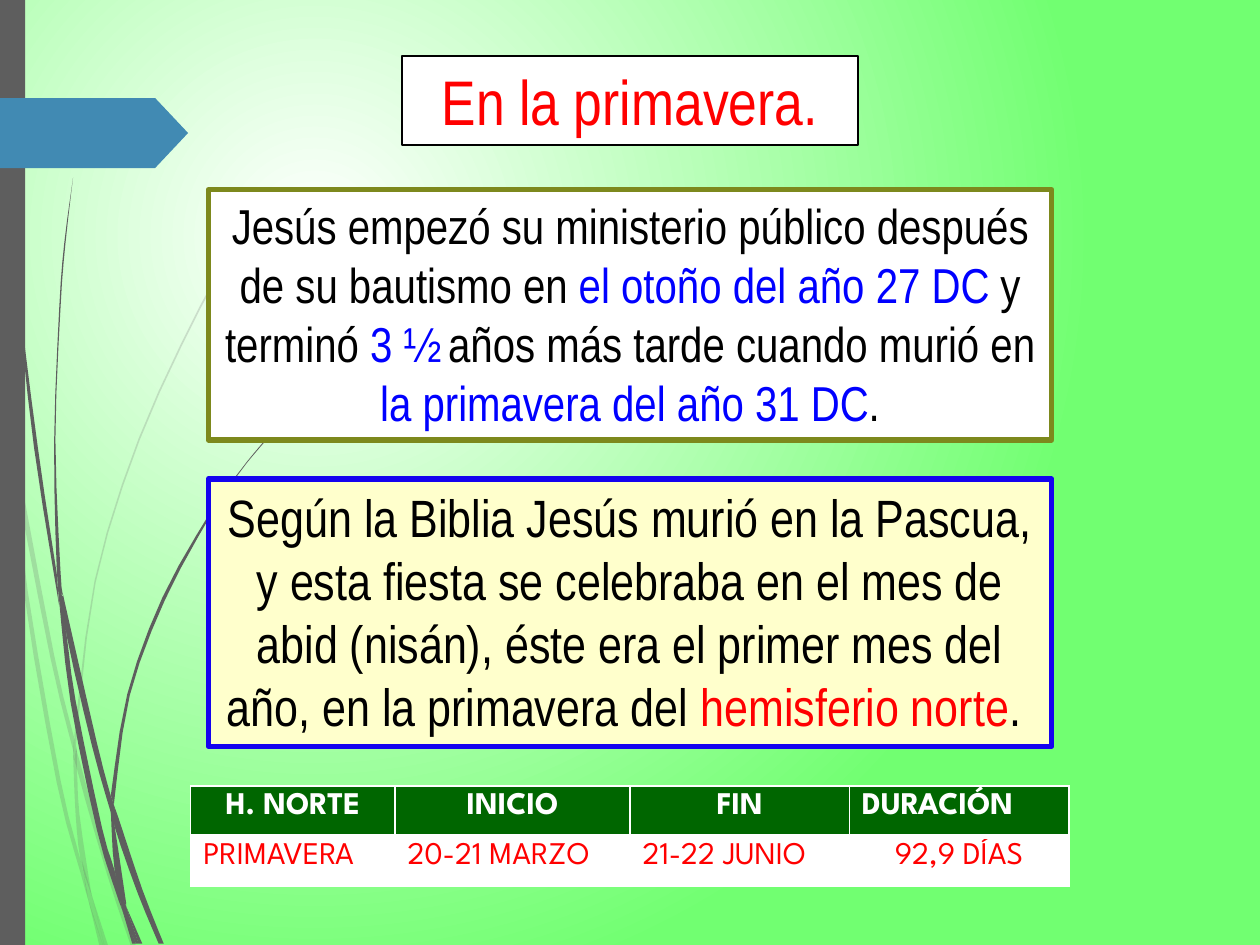
import pptx
import pptx.dml.color
import pptx.enum.shapes
import pptx.enum.text
import pptx.oxml
import pptx.oxml.ns
import pptx.util
from lxml import etree

Pt = pptx.util.Pt
qn = pptx.oxml.ns.qn
ALIGN = pptx.enum.text.PP_ALIGN
SHAPE = pptx.enum.shapes.MSO_SHAPE

COLOURS = {
    "white": "FFFFFF", "black": "000000", "red": "FF0000", "blue": "0000FF",
    "meadow": "71FF71", "grass": "5E5E5E", "arrow": "418AB3",
    "olive": "7D891D", "indigo": "1403EF", "cream": "FFFFCC", "header": "006600",
}

# Each blade of grass has an edge going down and an edge going back up,
# on a grid with this many points to the step.
GRID = 0.72
PALE_BLADES = [
    ([(0, 282), (6, 322), (8, 350)], [(7, 344), (0, 299)]),
    ([(10, 345), (12, 376), (40, 522), (59, 599)], [(59, 586), (43, 520), (10, 345)]),
    ([(61, 596), (61, 610), (85, 694), (104, 751)],
     [(108, 751), (88, 692), (64, 607), (61, 596)]),
    ([(73, 711), (83, 751)], [(86, 751), (73, 711)]),
    ([(8, 350), (19, 470), (45, 621), (64, 693), (70, 714)],
     [(69, 707), (64, 683), (48, 619), (22, 469), (12, 376), (8, 350)]),
    ([(58, 599), (60, 646), (64, 683), (73, 711)], [(72, 706), (63, 646), (61, 610), (58, 599)]),
    ([(217, 153), (201, 175), (186, 197), (158, 244), (110, 348), (75, 461), (59, 584)],
     [(61, 596), (61, 584), (76, 462), (111, 349), (159, 245), (187, 198), (201, 175),
      (217, 154)]),
    ([(70, 714), (79, 751)], [(82, 751), (70, 714)]),
    ([(58, 599), (61, 610)], [(61, 596), (59, 586), (58, 599)]),
    ([(65, 683), (70, 714), (82, 751)], [(83, 751), (73, 711), (65, 683)]),
]
DARK_BLADES = [
    ([(2, 0), (3, 48), (5, 110), (14, 233), (27, 355), (47, 481)],
     [(45, 455), (30, 355), (15, 232), (6, 109), (4, 48), (3, 0)]),
    ([(50, 472), (53, 505), (73, 592), (88, 645)], [(88, 632), (77, 590), (50, 472)]),
    ([(91, 641), (91, 656), (109, 708), (126, 749)],
     [(130, 749), (113, 706), (94, 649), (91, 641)]),
    ([(47, 477), (56, 557), (77, 659), (92, 708), (97, 722)],
     [(96, 717), (91, 691), (81, 657), (60, 556), (53, 505), (47, 477)]),
    ([(58, 141), (51, 193), (47, 245), (43, 349), (45, 449), (49, 472)],
     [(50, 472), (48, 453), (44, 349), (48, 245), (52, 193), (58, 141)]),
    ([(100, 719), (110, 749)], [(113, 749), (100, 719)]),
    ([(45, 449), (47, 477), (53, 505)], [(50, 472), (49, 472), (45, 449)]),
    ([(215, 344), (203, 358), (191, 373), (168, 405), (129, 474), (101, 551), (88, 631)],
     [(91, 641), (91, 633), (103, 552), (131, 476), (169, 406), (191, 374), (203, 359),
      (216, 344)]),
    ([(97, 722), (105, 749)], [(108, 749), (97, 722)]),
    ([(88, 645), (91, 691), (100, 719)], [(100, 716), (91, 656), (88, 645)]),
    ([(88, 631), (88, 645), (91, 656)], [(91, 641), (88, 631)]),
    ([(91, 691), (97, 722), (108, 749)], [(110, 749), (100, 719), (91, 691)]),
]


def rgb(colour):
    return pptx.dml.color.RGBColor.from_string(COLOURS[colour])


def paint(filled, colour):
    filled.fill.solid()
    filled.fill.fore_color.rgb = rgb(colour)


def line_xml(tag, width, colour):
    """Return a line element, for a text outline or a cell border."""
    line = etree.Element(qn(tag), w=str(Pt(width)))
    solid = etree.SubElement(line, qn("a:solidFill"))
    etree.SubElement(solid, qn("a:srgbClr"), val=COLOURS[colour])
    return line


def set_background(slide):
    """Glow from the upper left, white to green."""
    fill = slide.background.fill
    fill.gradient()
    for stop, position, colour in zip(fill.gradient_stops, (0, 0.99), ("white", "meadow")):
        stop.position = position
        stop.color.rgb = rgb(colour)
    linear = slide.background._cSld.find(".//" + qn("a:lin"))
    glow = etree.Element(qn("a:path"), path="circle")
    etree.SubElement(glow, qn("a:fillToRect"), l="50000", t="50000", r="100000", b="100000")
    linear.getparent().replace(linear, glow)


def smooth(points, steps=3):
    """Catmull-Rom curve through the points; a lone segment stays straight."""
    if len(points) < 3:
        return points
    padded = [points[0], *points, points[-1]]
    curve = []
    for a, b, c, d in zip(padded, padded[1:], padded[2:], padded[3:]):
        for step in range(steps):
            t = step / steps
            curve.append(tuple(
                q + t / 2 * (r - p + t * (2 * p - 5 * q + 4 * r - s + t * (3 * (q - r) + s - p)))
                for p, q, r, s in zip(a, b, c, d)))
    return curve + [points[-1]]


def add_blade(slide, edges, opacity):
    outline = [(Pt(x * GRID), Pt(y * GRID)) for edge in edges for x, y in smooth(edge)]
    builder = slide.shapes.build_freeform(*outline[0])
    builder.add_line_segments(outline[1:], close=True)
    blade = builder.convert_to_shape()
    finish_decoration(blade, "grass")
    if opacity < 100:
        shade = blade.fill._xPr.find(".//" + qn("a:srgbClr"))
        etree.SubElement(shade, qn("a:alpha"), val=str(opacity * 1000))


def finish_decoration(shape, colour):
    shape.shadow.inherit = False
    paint(shape, colour)
    shape.line.fill.background()


def add_decoration(slide, preset, box, colour):
    shape = slide.shapes.add_shape(preset, *map(Pt, box))
    finish_decoration(shape, colour)
    return shape


def add_run(paragraph, text, colour, outlined=True, **font_format):
    run = paragraph.add_run()
    run.text = text
    for attribute, value in font_format.items():
        setattr(run.font, attribute, value)
    run.font.color.rgb = rgb(colour)
    if outlined:
        run.font._element.insert(0, line_xml("a:ln", 1.5, colour))


def add_panel(slide, box, fill, border, border_width, size, runs):
    panel = slide.shapes.add_textbox(*map(Pt, box))
    paint(panel, fill)
    panel.line.color.rgb = rgb(border)
    panel.line.width = Pt(border_width)
    frame_format = {"word_wrap": True,
                    "auto_size": pptx.enum.text.MSO_AUTO_SIZE.SHAPE_TO_FIT_TEXT}
    for attribute, value in frame_format.items():
        setattr(panel.text_frame, attribute, value)
    paragraph = panel.text_frame.paragraphs[0]
    paragraph.alignment = ALIGN.CENTER
    for text, colour in runs:
        add_run(paragraph, text, colour, name="Arial Narrow", size=Pt(size))


def add_season_table(slide):
    widths = (116.8, 134.2, 125.4, 125.4)
    rows = (
        (("H. NORTE", "INICIO", "FIN", "DURACIÓN"), (0, 1, 2), "header", "white", 3),
        (("PRIMAVERA", "20-21 MARZO", "21-22 JUNIO", "92,9 DÍAS"), (3,), "white", "red", 1),
    )
    table = slide.shapes.add_table(len(rows), len(widths), Pt(109), Pt(449),
                                   Pt(sum(widths)), Pt(57.6)).table
    for column, width in zip(table.columns, widths):
        column.width = Pt(width)
    for r, (texts, centred, fill, colour, bottom) in enumerate(rows):
        header = r == 0
        for c, text in enumerate(texts):
            cell = table.cell(r, c)
            paint(cell, fill)
            paragraph = cell.text_frame.paragraphs[0]
            paragraph.alignment = ALIGN.CENTER if c in centred else ALIGN.LEFT
            add_run(paragraph, text, colour, outlined=not header,
                    name="League Spartan", size=Pt(18), bold=header)
            top = 1 if header else rows[0][-1]
            for place, (side, width) in enumerate(zip("LRTB", (1, 1, top, bottom))):
                cell._tc.get_or_add_tcPr().insert(place, line_xml("a:ln" + side, width, "white"))


def main():
    deck = pptx.Presentation()
    deck.slide_width, deck.slide_height = Pt(720), Pt(540)
    slide = deck.slides.add_slide(deck.slide_layouts[6])
    set_background(slide)
    for blades, opacity in ((PALE_BLADES, 20), (DARK_BLADES, 100)):
        for edges in blades:
            add_blade(slide, edges, opacity)
    add_decoration(slide, SHAPE.RECTANGLE, (0, 0, 14.4, 540), "grass")
    arrow = add_decoration(slide, SHAPE.PENTAGON, (0, 56, 107.5, 40), "arrow")
    arrow.adjustments[0] = 0.47

    add_panel(slide, (229.9, 32, 260.2, 51), "white", "black", 1.25, 36,
              [("En la primavera.", "red")])
    add_panel(slide, (119, 108.4, 482, 143), "white", "olive", 3, 28, [
        ("Jesús empezó su ministerio público después de su bautismo en ", "black"),
        ("el otoño del año 27 DC ", "blue"),
        ("y terminó ", "black"),
        ("3 ½ ", "blue"),
        ("años más tarde cuando murió en ", "black"),
        ("la primavera del año 31 DC", "blue"),
        (".", "black"),
    ])
    add_panel(slide, (119, 273.7, 482, 152.7), "cream", "indigo", 3, 30, [
        ("Según la Biblia Jesús murió en la Pascua, y esta fiesta se celebraba en el mes de "
         "abid (nisán), éste era el primer mes del año, en la primavera del ", "black"),
        ("hemisferio norte", "red"),
        (". ", "black"),
    ])
    add_season_table(slide)
    deck.save("out.pptx")


if __name__ == "__main__":
    main()
